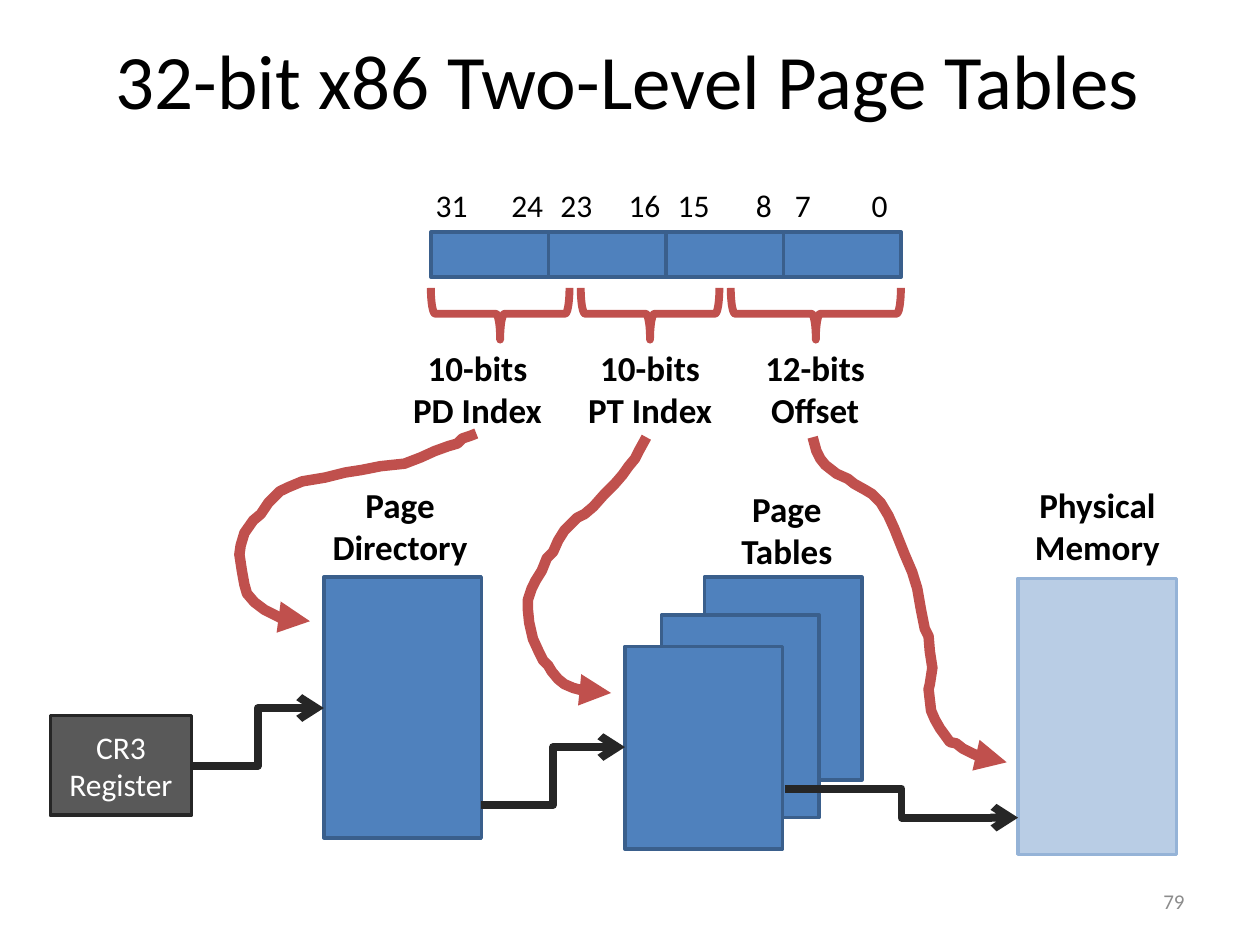
import pptx
import pptx.dml.color
import pptx.enum.shapes
import pptx.enum.text
import pptx.oxml.ns
import pptx.util
from lxml import etree

SHAPE = pptx.enum.shapes.MSO_SHAPE
ALIGN = pptx.enum.text.PP_ALIGN
ANCHOR = pptx.enum.text.MSO_ANCHOR

# The slide is a grid of 100 columns by 75 rows; every box is in grid cells.
CELL = pptx.util.Inches(0.1)
LABEL_WIDTH, LABEL_HEIGHT = 15, 7.7
FONT = "Calibri"
BLACK, WHITE, GREY = "000000", "FFFFFF", "8C8C8C"
BLUE, BLUE_EDGE = "4F81BD", "3A5F8C"
PALE, PALE_EDGE = "B9CDE5", "95B3D7"
DARK, DARK_EDGE = "595959", "262626"
RED = "C0504D"


def grid(*cells):
    return [round(cell * CELL) for cell in cells]


def color(hex_string):
    return pptx.dml.color.RGBColor.from_string(hex_string)


def set_line(shape, line_color, width, arrow=None):
    shape.line.color.rgb = color(line_color)
    shape.line.width = pptx.util.Pt(width)
    if arrow:
        line = shape.line._get_or_add_ln()
        etree.SubElement(line, pptx.oxml.ns.qn("a:tailEnd"), type=arrow)


def write(shape, lines, size, text_color=BLACK, bold=False, align=ALIGN.CENTER,
          anchor=ANCHOR.TOP, wrap=False):
    frame = shape.text_frame
    frame.word_wrap = wrap
    frame.vertical_anchor = anchor
    for index, line in enumerate(lines):
        paragraph = frame.add_paragraph() if index else frame.paragraphs[0]
        paragraph.alignment = align
        run = paragraph.add_run()
        run.text = line
        run.font.name = FONT
        run.font.size = pptx.util.Pt(size)
        run.font.bold = bold
        run.font.color.rgb = color(text_color)


def add_text(slide, box, lines, size, **style):
    write(slide.shapes.add_textbox(*grid(*box)), lines, size, **style)


def add_label(slide, centre, top, lines):
    """A bold label centred on a column, wide enough for its longest line."""
    box = (centre - LABEL_WIDTH / 2, top, LABEL_WIDTH, LABEL_HEIGHT)
    add_text(slide, box, lines, 20, bold=True)


def add_box(slide, kind, box, fill, line_color, width=2):
    shape = slide.shapes.add_shape(kind, *grid(*box))
    shape.shadow.inherit = False
    if fill:
        shape.fill.solid()
        shape.fill.fore_color.rgb = color(fill)
    else:
        shape.fill.background()
    set_line(shape, line_color, width)
    return shape


def add_address(slide, box):
    """Four bytes with bit numbers, and the three fields braced below."""
    left, top, width, height = box
    byte_width = width / 4
    for index in range(4):
        add_box(slide, SHAPE.FLOWCHART_PROCESS,
                (left + index * byte_width, top, byte_width, height), BLUE, BLUE_EDGE)

    # Bit numbers, by their distance from the left edge
    bits = {"31": -0.6, "24": 5.4, "23": 9.3, "16": 14.7,
            "15": 18.6, "8": 24.8, "7": 27.9, "0": 34}
    for bit, offset in bits.items():
        add_text(slide, (left + offset, top - 4.1, 1.3 * len(bit) + 2, 4), [bit], 18,
                 align=ALIGN.LEFT)

    # Fields: brace start, brace length, label centre, label
    fields = [(0, 11, 3.7, "10-bits", "PD Index"),
              (11.9, 11, 17.4, "10-bits", "PT Index"),
              (23.8, 13.5, 30.5, "12-bits", "Offset")]
    depth = 4.1
    for start, length, centre, bits_label, name in fields:
        middle = left + start + length / 2
        brace = add_box(slide, SHAPE.LEFT_BRACE,
                        (middle - depth / 2, top + 6.5 - length / 2, depth, length),
                        None, RED, 4.5)
        brace.rotation = 270
        add_label(slide, left + centre, top + 8.6, [bits_label, name])


def add_memory_block(slide, box, label, fill=BLUE, line_color=BLUE_EDGE,
                     stack=((0, 0),), label_shift=(0, 0)):
    """A labelled rectangle, or a stack of them from back to front."""
    left, top, width, height = box
    for across, down in stack:
        add_box(slide, SHAPE.RECTANGLE, (left + across, top + down, width, height),
                fill, line_color)
    add_label(slide, left + width / 2 + label_shift[0], top - 7.9 + label_shift[1], label)


def add_register(slide, box, lines):
    shape = add_box(slide, SHAPE.FLOWCHART_PROCESS, box, DARK, DARK_EDGE)
    write(shape, lines, 18, text_color=WHITE, anchor=ANCHOR.MIDDLE)


def add_elbow(slide, start, end):
    connector = slide.shapes.add_connector(
        pptx.enum.shapes.MSO_CONNECTOR.ELBOW, *grid(*start, *end))
    set_line(connector, DARK_EDGE, 4.5, "arrow")
    properties = connector._element.spPr
    etree.SubElement(properties, pptx.oxml.ns.qn("a:effectLst"))


def add_curve(slide, points):
    """A hand-drawn arrow through the given grid points."""
    corners = [grid(*point) for point in points]
    builder = slide.shapes.build_freeform(*corners[0])
    builder.add_line_segments(corners[1:], close=False)
    shape = builder.convert_to_shape()
    shape.shadow.inherit = False
    shape.fill.background()
    set_line(shape, RED, 6, "triangle")


INDEX_CURVES = [
    # PD index to page directory
    [(37.8, 34.4), (37.3, 34.6), (36.7, 34.8), (36.3, 35.2), (35.6, 35.4), (34.5, 35.8),
     (33.4, 36.3), (32.1, 36.8), (30.2, 37), (28.7, 37.3), (27.4, 37.5), (25.8, 37.9),
     (24, 38.2), (22.8, 38.7), (22.2, 39), (21.3, 39.9), (20.7, 40.8), (20.1, 41.3),
     (19.4, 42.3), (19.1, 43.3), (19, 44), (19.2, 45.3), (19.4, 46.4), (19.6, 47.1),
     (20.2, 47.8), (21, 48.4), (21.6, 48.7), (22.2, 49), (22.9, 49.3), (24.6, 49.3)],
    # PT index to page tables
    [(51.3, 34.7), (50.7, 35.8), (50.4, 36.4), (49.9, 37), (49.4, 37.7), (48.8, 38.4),
     (47.9, 39.3), (47.1, 40.2), (46.4, 40.8), (45.8, 41.1), (44.8, 42.1), (44.3, 42.9),
     (43.9, 43.8), (43.4, 44.3), (43, 45.3), (42.5, 46.1), (42.2, 46.7), (41.9, 47.6),
     (41.9, 48.4), (42, 49.4), (42.3, 50.7), (42.8, 51.8), (43.1, 52.4), (43.5, 52.8),
     (43.8, 53.3), (44.3, 53.9), (44.8, 54.3), (45.5, 54.6), (46.6, 54.9),
     (47.5, 55.2), (48.5, 55)],
    # Offset to physical memory
    [(64.5, 34.7), (64.8, 35.8), (65.1, 36.4), (65.5, 36.9), (66.4, 37.6), (67.3, 38),
     (67.8, 38.4), (68.7, 38.9), (69.2, 39.2), (69.9, 39.9), (70.5, 40.9), (71, 42),
     (71.4, 43), (71.8, 44), (72.4, 45.4), (72.8, 46.7), (73.1, 48.4), (73.4, 49.9),
     (73.7, 50.5), (73.8, 51.7), (74, 53), (73.8, 54.3), (73.7, 54.7), (73.9, 56.4),
     (74.2, 57.1), (74.6, 57.8), (75.4, 58.9), (75.9, 59), (76.4, 59.4), (77.2, 59.8),
     (77.8, 60.1), (78.7, 60.4), (79.9, 60.5)],
]


def main():
    presentation = pptx.Presentation()
    presentation.slide_width, presentation.slide_height = grid(100, 75)
    slide = presentation.slides.add_slide(presentation.slide_layouts[6])

    # Title and slide number
    add_text(slide, (0.5, 0, 98.7, 12.5), ["32-bit x86 Two-Level Page Tables"], 44,
             anchor=ANCHOR.MIDDLE, wrap=True)
    add_text(slide, (71.7, 69.5, 23.3, 4), ["79"], 12, text_color=GREY,
             align=ALIGN.RIGHT, anchor=ANCHOR.MIDDLE, wrap=True)

    # Virtual address and the structures it indexes
    add_address(slide, (34.2, 18.4, 37.3, 3.6))
    add_memory_block(slide, (25.7, 45.8, 12.5, 20.7), ["Page", "Directory"],
                     label_shift=(-0.2, 0))
    add_memory_block(slide, (55.9, 45.8, 12.5, 16.1), ["Page", "Tables"],
                     stack=((0, 0), (-3.4, 3), (-6.3, 5.5)), label_shift=(0.3, 0.3))
    add_memory_block(slide, (80.8, 45.9, 12.6, 21.9), ["Physical", "Memory"],
                     PALE, PALE_EDGE, label_shift=(0, -0.1))
    add_register(slide, (4, 56.8, 11.2, 7.9), ["CR3", "Register"])

    # Pointers between structures
    for start, end in [((15.2, 60.8), (25.7, 56.2)),
                       ((38.2, 63.9), (49.6, 59.3)),
                       ((62.3, 62.6), (80.8, 64.9))]:
        add_elbow(slide, start, end)

    # Index arrows
    for points in INDEX_CURVES:
        add_curve(slide, points)

    presentation.save("out.pptx")


if __name__ == "__main__":
    main()
